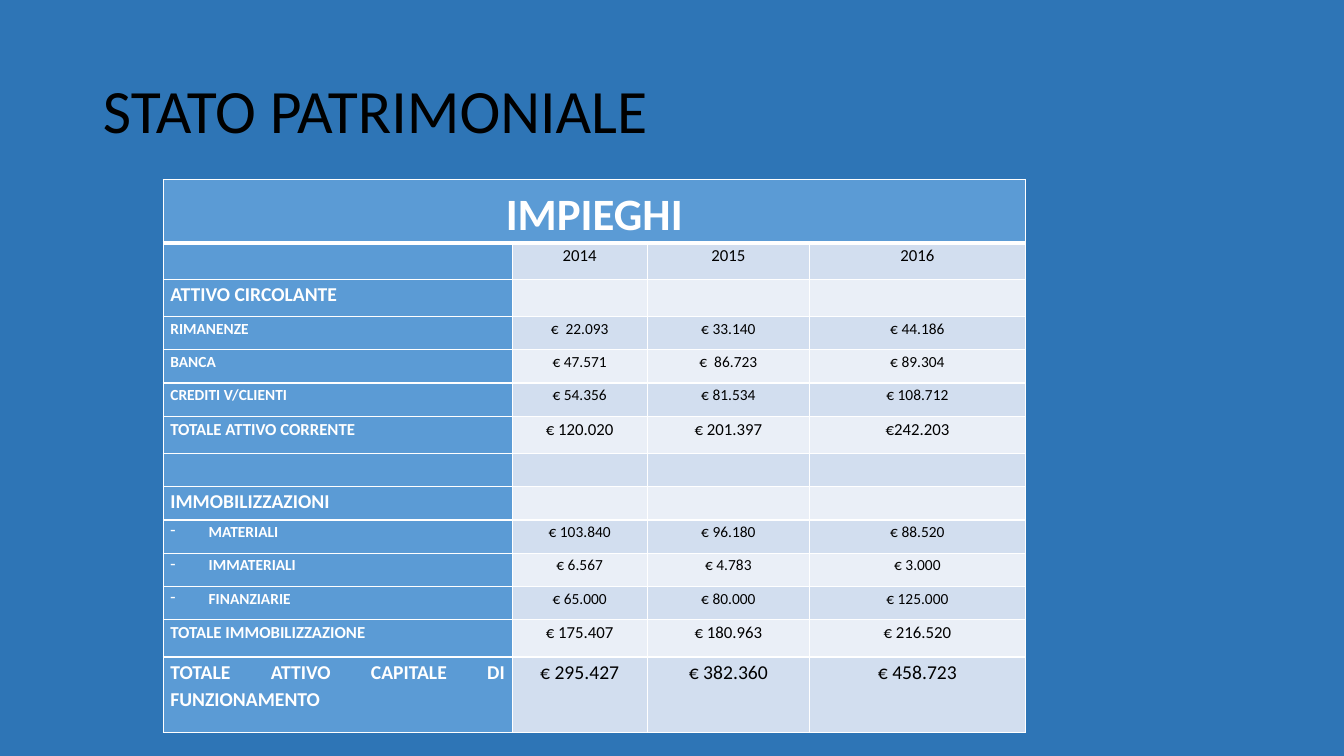
"""Builds the balance sheet slide with the table of assets by year."""
import pptx
import pptx.dml.color
import pptx.enum.text
import pptx.oxml
import pptx.oxml.ns
import pptx.util

Inches = pptx.util.Inches
Pt = pptx.util.Pt
RGBColor = pptx.dml.color.RGBColor
Align = pptx.enum.text.PP_ALIGN

BACKGROUND = RGBColor(0x2E, 0x75, 0xB6)
HEADING_FILL = RGBColor(0x5B, 0x9B, 0xD5)
BAND_FILLS = (RGBColor(0xEA, 0xEF, 0xF7), RGBColor(0xD2, 0xDE, 0xEF))
WHITE = RGBColor(0xFF, 0xFF, 0xFF)
BLACK = RGBColor(0, 0, 0)
FONT = "Calibri"

COLUMN_WIDTHS = (3.46, 1.34, 1.61, 2.14)
HEADER_HEIGHT = 0.63
ROWS = (
    (0.36, 12, "", "2014", "2015", "2016"),
    (0.37, 14, "ATTIVO CIRCOLANTE", "", "", ""),
    (0.33, 11, "RIMANENZE", "€  22.093", "€ 33.140", "€ 44.186"),
    (0.33, 11, "BANCA", "€ 47.571", "€  86.723", "€ 89.304"),
    (0.33, 11, "CREDITI V/CLIENTI", "€ 54.356", "€ 81.534", "€ 108.712"),
    (0.37, 12, "TOTALE ATTIVO CORRENTE", "€ 120.020", "€ 201.397", "€242.203"),
    (0.33, 11, "", "", "", ""),
    (0.33, 14, "IMMOBILIZZAZIONI", "", "", ""),
    (0.33, 11, "MATERIALI", "€ 103.840", "€ 96.180", "€ 88.520"),
    (0.33, 11, "IMMATERIALI", "€ 6.567", "€ 4.783", "€ 3.000"),
    (0.33, 11, "FINANZIARIE", "€ 65.000", "€ 80.000", "€ 125.000"),
    (0.37, 12, "TOTALE IMMOBILIZZAZIONE", "€ 175.407", "€ 180.963", "€ 216.520"),
    (0.75, 14, "TOTALE ATTIVO CAPITALE DI FUNZIONAMENTO",
     "€ 295.427", "€ 382.360", "€ 458.723"),
)
BULLETED = ("MATERIALI", "IMMATERIALI", "FINANZIARIE")


def set_font(para, size, color, bold=False):
    """Formats the whole paragraph."""
    font = para.font
    font.name, font.size, font.bold = FONT, Pt(size), bold
    font.color.rgb = color


def set_borders(cell, **widths):
    """Draws white cell borders, 1 point wide unless a side is given."""
    properties = cell._tc.get_or_add_tcPr()
    for index, side in enumerate(("lnL", "lnR", "lnT", "lnB")):
        line = pptx.oxml.parse_xml(
            f'<a:{side} {pptx.oxml.ns.nsdecls("a")} w="{Pt(widths.get(side, 1))}">'
            f'<a:solidFill><a:srgbClr val="{WHITE}"/></a:solidFill></a:{side}>')
        properties.insert(index, line)


def add_dash(para):
    """Gives the paragraph a dash bullet with a hanging indent."""
    properties = para._p.get_or_add_pPr()
    properties.set("marL", str(Inches(0.38)))
    properties.set("indent", str(-Inches(0.38)))
    bullet = pptx.oxml.parse_xml(
        f'<a:buChar {pptx.oxml.ns.nsdecls("a")} char="-"/>')
    properties.insert_element_before(bullet, "a:tabLst", "a:defRPr", "a:extLst")


def fill_cell(cell, text, size, fill, color, align, bold=False, **widths):
    """Sets the fill, borders and text of one table cell."""
    cell.margin_left = cell.margin_right = Inches(0.07)
    cell.margin_top = cell.margin_bottom = 0
    cell.fill.solid()
    cell.fill.fore_color.rgb = fill
    set_borders(cell, **widths)
    para = cell.text_frame.paragraphs[0]
    para.alignment, para.line_spacing = align, 1.15
    set_font(para, size, color, bold)
    if text:
        para.add_run().text = text
    if text in BULLETED:
        add_dash(para)


def add_title(page, text):
    """Places and formats the slide title."""
    title = page.shapes.title
    title.left, title.top = Inches(0.92), Inches(0.4)
    title.width, title.height = Inches(11.5), Inches(1.45)
    frame = title.text_frame
    frame.text = text
    frame.vertical_anchor = pptx.enum.text.MSO_ANCHOR.MIDDLE
    para = frame.paragraphs[0]
    para.alignment, para.line_spacing = Align.LEFT, 0.9
    set_font(para, 44, BLACK)


def add_assets_table(page):
    """Adds the table of assets with its merged header."""
    heights = [HEADER_HEIGHT] + [row[0] for row in ROWS]
    table = page.shapes.add_table(
        len(heights), len(COLUMN_WIDTHS), Inches(1.62), Inches(1.78),
        Inches(sum(COLUMN_WIDTHS)), Inches(sum(heights))).table
    for column, width in zip(table.columns, COLUMN_WIDTHS):
        column.width = Inches(width)
    for row, height in zip(table.rows, heights):
        row.height = Inches(height)
    header = table.cell(0, 0)
    header.merge(table.cell(0, len(COLUMN_WIDTHS) - 1))
    fill_cell(header, "IMPIEGHI", 32, HEADING_FILL, WHITE, Align.CENTER, True, lnB=3)
    for index, (_, size, label, *values) in enumerate(ROWS, start=1):
        top = 3 if index == 1 else 1
        fill_cell(table.cell(index, 0), label, size, HEADING_FILL, WHITE,
                  Align.JUSTIFY, True, lnT=top)
        for column, value in enumerate(values, start=1):
            fill_cell(table.cell(index, column), value, size, BAND_FILLS[index % 2],
                      BLACK, Align.CENTER, lnT=top)


def main():
    """Builds and saves the deck."""
    deck = pptx.Presentation()
    deck.slide_width, deck.slide_height = Inches(13.33), Inches(7.5)
    page = deck.slides.add_slide(deck.slide_layouts.get_by_name("Title Only"))
    page.background.fill.solid()
    page.background.fill.fore_color.rgb = BACKGROUND
    add_title(page, "STATO PATRIMONIALE")
    add_assets_table(page)
    deck.save("out.pptx")


if __name__ == "__main__":
    main()
